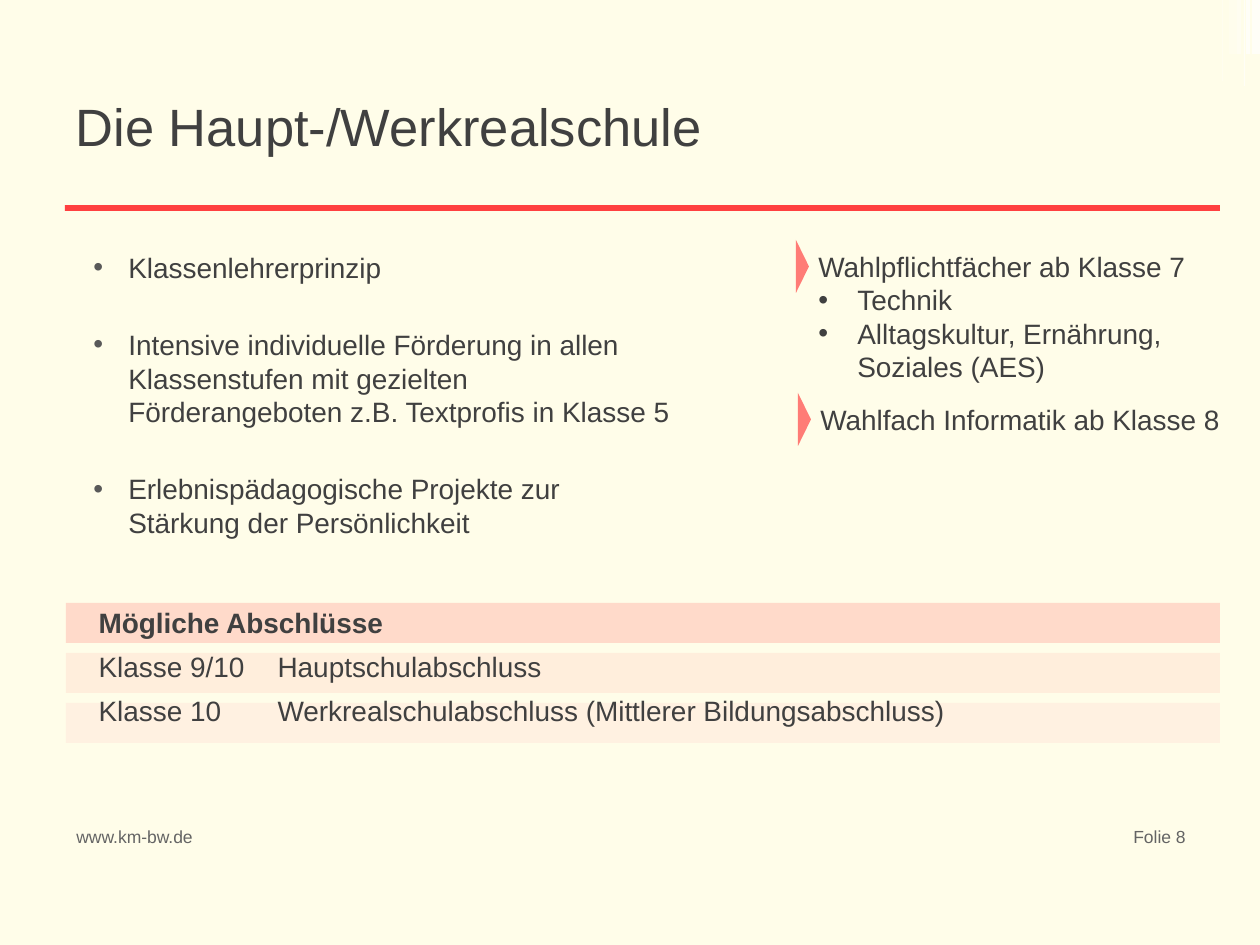
from dataclasses import dataclass

from lxml import etree
from pptx import Presentation
from pptx import util as u
from pptx.dml.color import RGBColor
from pptx.enum import shapes, text
from pptx.oxml.ns import qn

PX = 914400 / 126
NO_TABLE_STYLE = "{2D5ABB26-0587-4C30-8999-92F81FD0307C}"


@dataclass(frozen=True)
class Theme:
    font: str = "Arial"
    background: str = "FFFDE9"
    ink: str = "404040"
    bullet: str = "595959"
    muted: str = "646464"
    accent: str = "FF4040"
    bands: tuple = (("FF4040", 18), ("FF6D6D", 10), ("FFBFBF", 18))
    glint: str = "FFFFFF"
    title_size: int = 30
    body_size: int = 16
    footer_size: int = 10


THEME = Theme()


def px(*lengths):
    return [u.Emu(round(length * PX)) for length in lengths]


def style_runs(paragraph, size=THEME.body_size, color=THEME.ink, bold=False):
    for run in paragraph.runs:
        run.font.name = THEME.font
        run.font.size = u.Pt(size)
        run.font.bold = bold
        run.font.color.rgb = RGBColor.from_string(color)


def add_filled(slide, box, color, opacity=100, kind=shapes.MSO_SHAPE.RECTANGLE):
    shape = slide.shapes.add_shape(kind, *px(*box))
    shape.shadow.inherit = False
    shape.fill.solid()
    shape.fill.fore_color.rgb = RGBColor.from_string(color)
    shape.line.fill.background()
    if opacity < 100:
        rgb = shape.element.spPr.find(qn("a:solidFill"))[0]
        etree.SubElement(rgb, qn("a:alpha"), val=str(opacity * 1000))
    return shape


def add_text(slide, box, lines):
    frame = slide.shapes.add_textbox(*px(*box)).text_frame
    frame.word_wrap = True
    frame.text = "\n".join(lines)
    return frame


def add_bullet(paragraph, indent, hanging, color):
    properties = paragraph._p.get_or_add_pPr()
    left, first = px(indent, -hanging)
    properties.set("marL", str(left))
    properties.set("indent", str(first))
    bullet_color = etree.SubElement(properties, qn("a:buClr"))
    etree.SubElement(bullet_color, qn("a:srgbClr"), val=color)
    etree.SubElement(properties, qn("a:buFont"), typeface=THEME.font)
    etree.SubElement(properties, qn("a:buChar"), char="•")


def add_corner_glints(slide):
    """Pale vertical strips at the top right corner: left, width, height, opacity."""
    for left, width, height, opacity in (
        (1246, 4, 54, 65), (1252, 8, 54, 65), (1222, 1, 81, 30),
        (1244, 1, 86, 60), (1229, 8, 54, 20), (1237, 4, 54, 40),
    ):
        add_filled(slide, (left, 0, width, height), THEME.glint, opacity)


def add_heading(slide, left, top, width):
    title = slide.shapes.title
    title.left, title.top, title.width, title.height = px(left, top, width - 21, 97)
    frame = title.text_frame
    frame.text = "Die Haupt-/Werkrealschule"
    frame.auto_size = text.MSO_AUTO_SIZE.NONE
    frame.vertical_anchor = text.MSO_ANCHOR.MIDDLE
    frame.paragraphs[0].alignment = text.PP_ALIGN.LEFT
    style_runs(frame.paragraphs[0], THEME.title_size)
    add_filled(slide, (left + 2, top + 128, width, 6), THEME.accent)


def add_principles(slide, left, top, width, height):
    frame = add_text(slide, (left, top, width, height), (
        "Klassenlehrerprinzip",
        "Intensive individuelle Förderung in allen Klassenstufen mit gezielten "
        "Förderangeboten z.B. Textprofis in Klasse 5",
        "Erlebnispädagogische Projekte zur Stärkung der Persönlichkeit",
    ))
    frame.margin_right = px(74)[0]
    for index, paragraph in enumerate(frame.paragraphs):
        if index:
            paragraph.space_before = u.Pt(25)
        add_bullet(paragraph, 50, 35, THEME.bullet)
        style_runs(paragraph)


def add_elective(slide, left, top, width, height, heading, subjects=()):
    """A red pointer with a heading and, below it, bulleted subjects."""
    frame = add_text(slide, (left + 10, top + 3, width, height), (heading, *subjects))
    for index, paragraph in enumerate(frame.paragraphs):
        if index:
            add_bullet(paragraph, 39, 39, THEME.ink)
        style_runs(paragraph)
    pointer = add_filled(slide, (left, top, 13, 53), THEME.accent, 68,
                         shapes.MSO_SHAPE.PENTAGON)
    pointer.adjustments[0] = 1


def add_qualifications(slide, left, top, width):
    for index, (color, opacity) in enumerate(THEME.bands):
        add_filled(slide, (left, top + 50 * index, width, 40), color, opacity)

    rows = (
        ("Mögliche Abschlüsse", ""),
        ("Klasse 9/10", "Hauptschulabschluss"),
        ("Klasse 10", "Werkrealschulabschluss (Mittlerer Bildungsabschluss)"),
    )
    column_widths = px(179, 892)
    row_height = px(44)[0]
    frame = slide.shapes.add_table(
        len(rows), 2, *px(left + 20, top, 1071, 44 * len(rows)))
    for style_id in frame.element.iter(qn("a:tableStyleId")):
        style_id.text = NO_TABLE_STYLE
    table = frame.table
    table.first_row = table.horz_banding = False
    for column, column_width in zip(table.columns, column_widths):
        column.width = column_width
    for row_index, entries in enumerate(rows):
        table.rows[row_index].height = row_height
        for cell, entry in zip(table.rows[row_index].cells, entries):
            cell.fill.background()
            cell.margin_top = cell.margin_bottom = px(5)[0]
            cell.text = entry
            style_runs(cell.text_frame.paragraphs[0], bold=row_index == 0)
    table.cell(0, 0).merge(table.cell(0, 1))


def add_footer(slide, left, top, width, height):
    address_width, number_width = 168, 122
    for x, part_width, label, alignment in (
        (left, address_width, "www.km-bw.de", text.PP_ALIGN.LEFT),
        (left + width - number_width, number_width, "Folie 8", text.PP_ALIGN.RIGHT),
    ):
        paragraph = add_text(slide, (x, top, part_width, height), (label,)).paragraphs[0]
        paragraph.alignment = alignment
        style_runs(paragraph, THEME.footer_size, THEME.muted)


def main():
    presentation = Presentation()
    presentation.slide_width, presentation.slide_height = px(1260, 945)
    slide = presentation.slides.add_slide(presentation.slide_layouts[5])
    slide.background.fill.solid()
    slide.background.fill.fore_color.rgb = RGBColor.from_string(THEME.background)

    add_corner_glints(slide)
    add_heading(slide, 63, 77, 1155)
    add_principles(slide, 66, 244, 680, 338)
    add_elective(slide, 796, 240, 410, 150, "Wahlpflichtfächer ab Klasse 7",
                 ("Technik", "Alltagskultur, Ernährung, Soziales (AES)"))
    add_elective(slide, 798, 393, 440, 50, "Wahlfach Informatik ab Klasse 8")
    add_qualifications(slide, 66, 603, 1154)
    add_footer(slide, 64, 820, 1134, 49)
    presentation.save("out.pptx")


if __name__ == "__main__":
    main()
